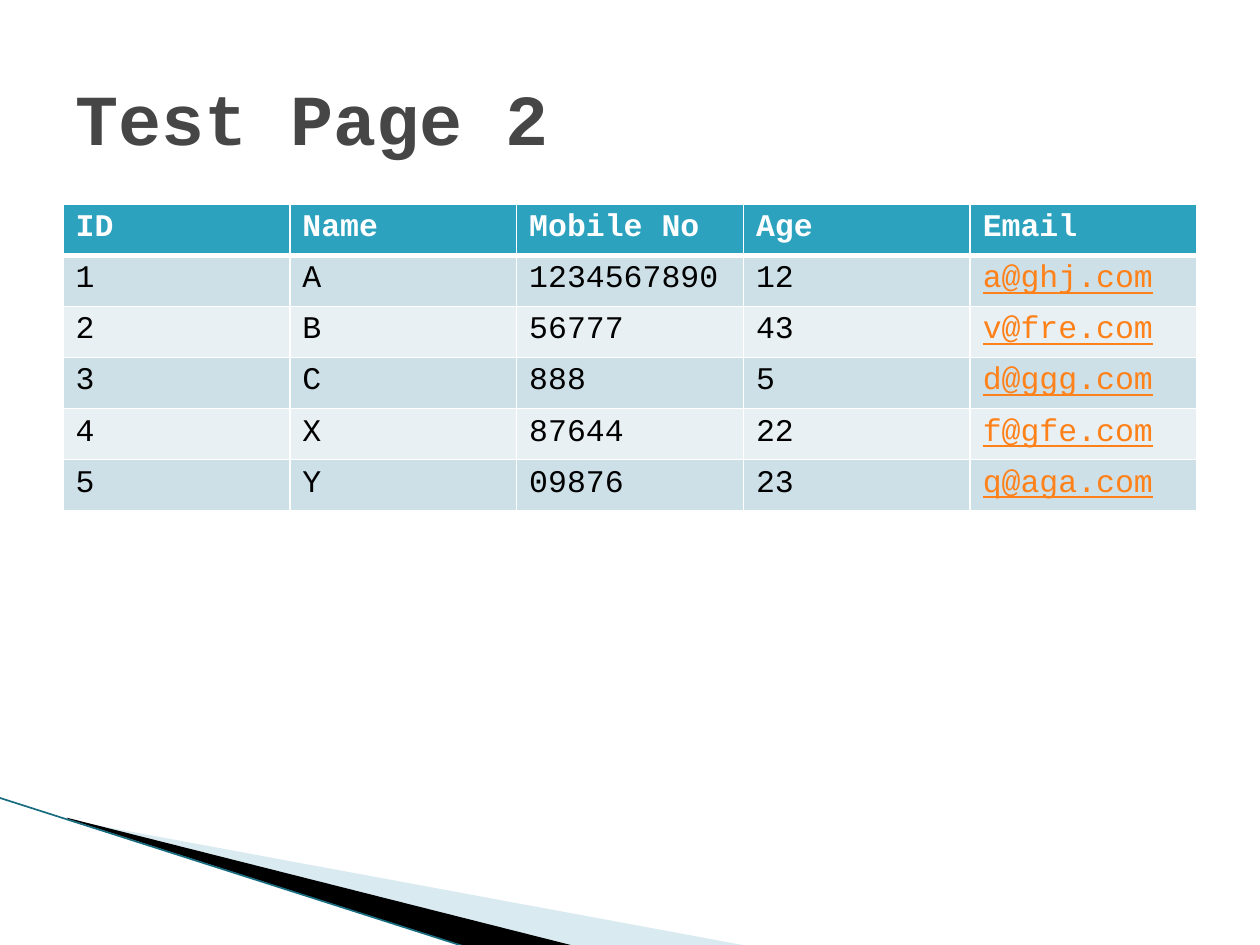
import dataclasses

import lxml.etree
import pptx
import pptx.dml.color
import pptx.enum.shapes
import pptx.enum.text
import pptx.oxml.ns
import pptx.util

Inches = pptx.util.Inches
Pt = pptx.util.Pt
qn = pptx.oxml.ns.qn


@dataclasses.dataclass(frozen=True)
class Theme:
    font: str = "Courier New"
    title_size: int = 41
    table_size: int = 18
    title: str = "464646"
    text: str = "000000"
    white: str = "FFFFFF"
    link: str = "FF8119"
    header: str = "2DA2BF"
    bands: tuple = ("CDE0E8", "E8F0F4")
    pale_wedge: str = "A0CBDC"
    dark_wedge: str = "000000"
    edge: str = "186C80"


def rgb(value):
    return pptx.dml.color.RGBColor.from_string(value)


class SlideBuilder:
    def __init__(self, slide, theme):
        self.slide = slide
        self.theme = theme

    def style(self, p, size, color, bold=False, underline=False):
        p.font.name = self.theme.font
        p.font.size = Pt(size)
        p.font.color.rgb = rgb(color)
        p.font.bold = bold
        p.font.underline = underline

    def wedge(self, points, frame, color, opacity=100):
        corners = [(Inches(x), Inches(y)) for x, y in points]
        fb = self.slide.shapes.build_freeform(*corners[0])
        fb.add_line_segments(corners[1:])
        sp = fb.convert_to_shape()
        self.set_frame(sp, *(Inches(v) for v in frame))
        sp.shadow.inherit = False
        sp.fill.solid()
        sp.fill.fore_color.rgb = rgb(color)
        sp.line.fill.background()
        if opacity < 100:
            clr = sp._element.spPr.find(qn("a:solidFill"))[0]
            alpha = lxml.etree.SubElement(clr, qn("a:alpha"))
            alpha.set("val", str(opacity * 1000))

    def set_frame(self, sp, left, top, width, height):
        dx, dy = sp.left - left, sp.top - top
        outline = next(sp._element.iter(qn("a:path")))
        outline.set("w", str(width))
        outline.set("h", str(height))
        for pt in outline.iter(qn("a:pt")):
            pt.set("x", str(int(pt.get("x")) + dx))
            pt.set("y", str(int(pt.get("y")) + dy))
        sp.left, sp.top, sp.width, sp.height = left, top, width, height

    def line(self, start, end, color, width):
        x1, y1, x2, y2 = (Inches(v) for v in start + end)
        straight = pptx.enum.shapes.MSO_CONNECTOR.STRAIGHT
        cxn = self.slide.shapes.add_connector(straight, x1, y1, x2, y2)
        cxn.line.color.rgb = rgb(color)
        cxn.line.width = Pt(width)
        lxml.etree.SubElement(cxn._element.spPr, qn("a:effectLst"))

    def title(self, text, left, top, width, height):
        box = (Inches(v) for v in (left, top, width, height))
        tf = self.slide.shapes.add_textbox(*box).text_frame
        tf.word_wrap = True
        tf.vertical_anchor = pptx.enum.text.MSO_ANCHOR.MIDDLE
        p = tf.paragraphs[0]
        p.text = text
        self.style(p, self.theme.title_size, self.theme.title, bold=True)

    def borders(self, cell, bottom):
        tcPr = cell._tc.get_or_add_tcPr()
        widths = {"lnL": 1, "lnR": 1, "lnT": 1, "lnB": bottom}
        for i, (tag, width) in enumerate(widths.items()):
            ln = lxml.etree.Element(qn("a:" + tag), w=str(Pt(width)))
            fill = lxml.etree.SubElement(ln, qn("a:solidFill"))
            lxml.etree.SubElement(fill, qn("a:srgbClr"), val=self.theme.white)
            tcPr.insert(i, ln)

    def table(self, rows, link_col, left, top, width, height):
        t = self.theme
        box = (Inches(v) for v in (left, top, width, height))
        table = self.slide.shapes.add_table(len(rows), len(rows[0]), *box).table
        for i, row in enumerate(rows):
            header = i == 0
            for j, text in enumerate(row):
                link = not header and j == link_col
                color = t.white if header else t.link if link else t.text
                cell = table.cell(i, j)
                cell.fill.solid()
                cell.fill.fore_color.rgb = rgb(t.header if header else t.bands[(i - 1) % 2])
                self.borders(cell, 3 if header else 1)
                p = cell.text_frame.paragraphs[0]
                p.text = text
                self.style(p, t.table_size, color, bold=header, underline=link)


def main():
    prs = pptx.Presentation()
    prs.slide_width = Inches(10)
    prs.slide_height = Inches(7.5)
    theme = Theme()
    s = SlideBuilder(prs.slides.add_slide(prs.slide_layouts[6]), theme)

    s.wedge([(0.55, 6.51), (5.95, 7.51), (4.56, 7.51), (0.55, 6.5)],
            (0.78, 5.47, 4.16, 1.58), theme.pale_wedge, opacity=40)
    s.wedge([(0.53, 6.49), (4.57, 7.51), (3.72, 7.52), (0.54, 6.5)],
            (-0.06, 6.33, 4.16, 0.92), theme.dark_wedge)
    s.line((-0.01, 6.33), (3.71, 7.52), theme.edge, 0.95)

    rows = [
        ("ID", "Name", "Mobile No", "Age", "Email"),
        ("1", "A", "1234567890", "12", "a@ghj.com"),
        ("2", "B", "56777", "43", "v@fre.com"),
        ("3", "C", "888", "5", "d@ggg.com"),
        ("4", "X", "87644", "22", "f@gfe.com"),
        ("5", "Y", "09876", "23", "q@aga.com"),
    ]
    s.table(rows, 4, 0.5, 1.62, 9, 7.3 / 3)
    s.title("Test Page 2", 0.5, 0.3, 9, 1.25)

    prs.save("out.pptx")


if __name__ == "__main__":
    main()
